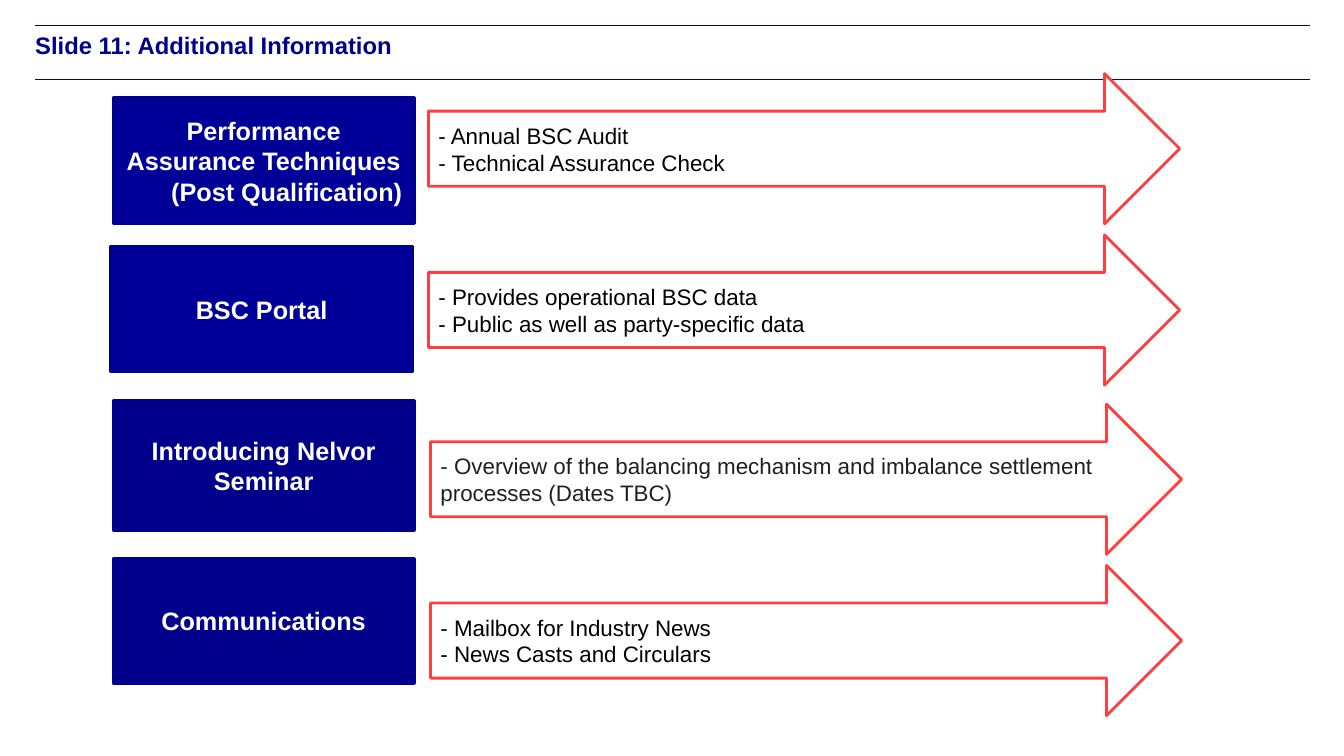
from lxml import etree
from pptx import Presentation
from pptx.dml.color import RGBColor
from pptx.enum.shapes import MSO_CONNECTOR, MSO_SHAPE
from pptx.enum.text import MSO_ANCHOR, PP_ALIGN
from pptx.oxml.ns import qn
from pptx.util import Inches, Pt

RECTANGLE, ARROW = MSO_SHAPE.RECTANGLE, MSO_SHAPE.RIGHT_ARROW
STRAIGHT = MSO_CONNECTOR.STRAIGHT
TOP, MIDDLE = MSO_ANCHOR.TOP, MSO_ANCHOR.MIDDLE
LEFT, CENTER = PP_ALIGN.LEFT, PP_ALIGN.CENTER

NAVY, BLUE, RED = "00008B", "000099", "FF3F3F"
WHITE, BLACK, CHARCOAL = "FFFFFF", "000000", "231F20"
TITLE_FONT = {"name": "Arial", "size": Pt(17), "bold": True}
LABEL_FONT = {"name": "Arial", "size": Pt(18), "bold": True}
DETAIL_FONT = {"name": "Arial", "size": Pt(16), "bold": False}
LABEL_WIDTH = 2.99
ARROW_SIZE = (7.45, 1.49)

TOPICS = [
    {"label": ["Performance Assurance Techniques", "(Post Qualification)"],
     "label_box": (1.12, 0.97, LABEL_WIDTH, 1.25), "fill": BLUE,
     "details": ["- Annual BSC Audit", "- Technical Assurance Check"],
     "arrow_box": (4.25, 0.73, *ARROW_SIZE), "color": BLACK},
    {"label": ["BSC Portal"],
     "label_box": (1.1, 2.44, LABEL_WIDTH, 1.25), "fill": BLUE,
     "details": ["- Provides operational BSC data",
                 "- Public as well as party-specific data"],
     "arrow_box": (4.25, 2.33, *ARROW_SIZE), "color": BLACK},
    {"label": ["Introducing Nelvor Seminar"],
     "label_box": (1.12, 3.97, LABEL_WIDTH, 1.29), "fill": NAVY,
     "details": ["- Overview of the balancing mechanism and imbalance "
                 "settlement processes (Dates TBC)"],
     "arrow_box": (4.27, 4.01, *ARROW_SIZE), "color": CHARCOAL},
    {"label": ["Communications"],
     "label_box": (1.12, 5.54, LABEL_WIDTH, 1.24), "fill": NAVY,
     "details": ["- Mailbox for Industry News", "- News Casts and Circulars"],
     "arrow_box": (4.27, 5.61, *ARROW_SIZE), "color": BLACK},
]


def rgb(value):
    """Turn a hex string into a colour."""
    return RGBColor.from_string(value)


def write(frame, lines, font, color, align=LEFT, anchor=MIDDLE):
    """Fill a text frame with one paragraph per line."""
    frame.word_wrap = True
    frame.vertical_anchor = anchor
    for index, line in enumerate(lines):
        para = frame.paragraphs[0] if index == 0 else frame.add_paragraph()
        para.alignment = align
        span = para.add_run()
        span.text = line
        for name, value in font.items():
            setattr(span.font, name, value)
        span.font.color.rgb = rgb(color)


def add_block(page, kind, box, fill, line):
    """Add a filled and outlined shape without shadow."""
    block = page.shapes.add_shape(kind, *map(Inches, box))
    block.shadow.inherit = False
    block.fill.solid()
    block.fill.fore_color.rgb = rgb(fill)
    block.line.color.rgb = rgb(line)
    block.line.width = Pt(2)
    return block


def add_header(page, box, title):
    """Place the title between two thin rules at the edges of the box."""
    left, top, width, height = box
    for y in (top, top + height):
        rule = page.shapes.add_connector(
            STRAIGHT, Inches(left), Inches(y), Inches(left + width), Inches(y))
        rule.line.color.rgb = rgb(NAVY)
        rule.line.width = Pt(0.5)
        etree.SubElement(rule._element.spPr, qn("a:effectLst"))
    heading = page.shapes.add_textbox(
        *map(Inches, (left, top + 0.05, width, height - 0.05)))
    frame = heading.text_frame
    for side in ("left", "top", "right", "bottom"):
        setattr(frame, f"margin_{side}", 0)
    write(frame, [title], TITLE_FONT, NAVY, anchor=TOP)


def add_label(page, box, lines, fill):
    """Place a topic label, with any second line indented from the left."""
    label = add_block(page, RECTANGLE, box, fill, NAVY)
    write(label.text_frame, lines, LABEL_FONT, WHITE, align=CENTER)
    for para in label.text_frame.paragraphs[1:]:
        para.alignment = LEFT
        para._p.get_or_add_pPr().set("marL", str(Inches(0.48)))


def add_details(page, box, lines, color):
    """Place an outlined arrow that holds the details of a topic."""
    arrow = add_block(page, ARROW, box, WHITE, RED)
    write(arrow.text_frame, lines, DETAIL_FONT, color)


def main():
    """Build the slide and save the deck."""
    deck = Presentation()
    deck.slide_width, deck.slide_height = Inches(13.33), Inches(7.5)
    page = deck.slides.add_slide(deck.slide_layouts[6])
    add_header(page, (0.35, 0.25, 12.64, 0.54),
               "Slide 11: Additional Information")
    for topic in TOPICS:
        add_label(page, topic["label_box"], topic["label"], topic["fill"])
        add_details(page, topic["arrow_box"], topic["details"], topic["color"])
    deck.save("out.pptx")


if __name__ == "__main__":
    main()
